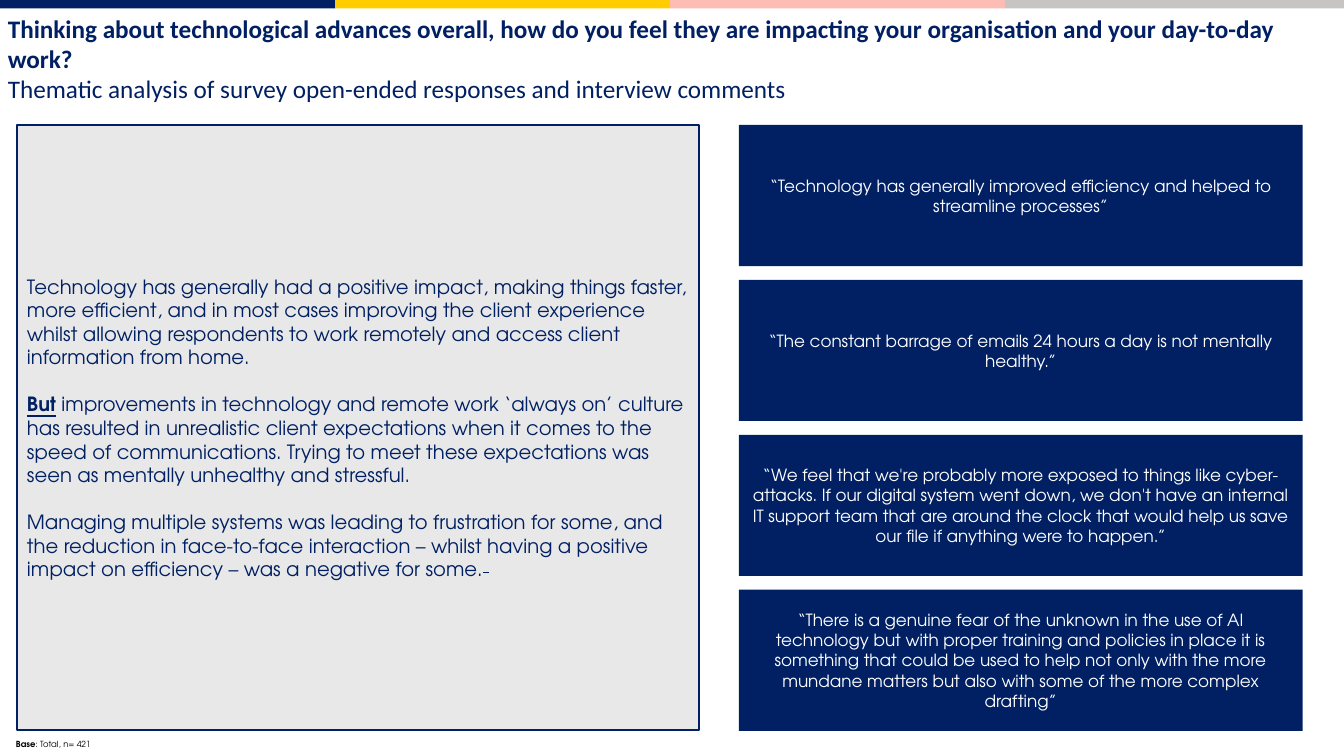
from dataclasses import dataclass

from pptx import Presentation
from pptx.dml.color import RGBColor
from pptx.enum.shapes import MSO_SHAPE
from pptx.enum.text import MSO_ANCHOR, PP_ALIGN
from pptx.shapes.autoshape import Shape
from pptx.slide import Slide
from pptx.util import Pt

RECT = MSO_SHAPE.RECTANGLE
TOP, MIDDLE = MSO_ANCHOR.TOP, MSO_ANCHOR.MIDDLE
LEFT, CENTER = PP_ALIGN.LEFT, PP_ALIGN.CENTER

NAVY = RGBColor(0x00, 0x20, 0x63)
YELLOW = RGBColor(0xFF, 0xCD, 0x00)
PINK = RGBColor(0xFD, 0xBC, 0xB4)
SILVER = RGBColor(0xC7, 0xC4, 0xC4)
PALE = RGBColor(0xE8, 0xE8, 0xE8)
WHITE = RGBColor(0xFF, 0xFF, 0xFF)
BLACK = RGBColor(0x00, 0x00, 0x00)

HEADING_FONT = "Calibri"
BODY_FONT = "TeX Gyre Adventor"
SLIDE_W, SLIDE_H = 960, 540
BAND_W, BAND_H = 239.33, 6
PANEL_TOP = 89.3
QUOTE_PITCH = 110.65


@dataclass(frozen=True)
class Box:
    left: float
    top: float
    width: float
    height: float

    def lengths(self) -> tuple[Pt, Pt, Pt, Pt]:
        return Pt(self.left), Pt(self.top), Pt(self.width), Pt(self.height)


@dataclass(frozen=True)
class Run:
    text: str
    bold: bool = False
    underline: bool = False
    strike: bool = False


@dataclass(frozen=True)
class TextStyle:
    font: str
    size: float
    color: RGBColor
    align: PP_ALIGN = LEFT
    anchor: MSO_ANCHOR = TOP
    gap: float = 0


TITLE = TextStyle(HEADING_FONT, 18, NAVY)
SUMMARY = TextStyle(BODY_FONT, 14, NAVY, anchor=MIDDLE, gap=16.8)
QUOTE = TextStyle(BODY_FONT, 12, WHITE, align=CENTER, anchor=MIDDLE)
FOOTNOTE = TextStyle(BODY_FONT, 6, BLACK)

TITLE_TEXT = [
    [Run("Thinking about technological advances overall, how do you feel they are "
         "impacting your organisation and your day-to-day work?", bold=True)],
    [Run("Thematic analysis of survey open-ended responses and interview comments")],
]
SUMMARY_TEXT = [
    [Run("Technology has generally had a positive impact, making things faster, more "
         "efficient, and in most cases improving the client experience whilst allowing "
         "respondents to work remotely and access client information from home.")],
    [Run("But", bold=True, underline=True),
     Run(" improvements in technology and remote work ‘always on’ culture has resulted "
         "in unrealistic client expectations when it comes to the speed of "
         "communications. Trying to meet these expectations was seen as mentally "
         "unhealthy and stressful.")],
    [Run("Managing multiple systems was leading to frustration for some, and the "
         "reduction in face-to-face interaction – whilst having a positive impact on "
         "efficiency – was a negative for some."),
     Run(" ", bold=True, strike=True)],
]
QUOTES = [
    "“Technology has generally improved efficiency and helped to streamline processes”",
    "“The constant barrage of emails 24 hours a day is not mentally healthy.”",
    "“We feel that we're probably more exposed to things like cyber-attacks. If our "
    "digital system went down, we don't have an internal IT support team that are "
    "around the clock that would help us save our file if anything were to happen.”",
    "“There is a genuine fear of the unknown in the use of AI technology but with proper "
    "training and policies in place it is something that could be used to help not only "
    "with the more mundane matters but also with some of the more complex drafting”",
]
FOOTNOTE_TEXT = [[Run("Base", bold=True), Run(": Total, n= 421")]]


def write(sp: Shape, paragraphs: list[list[Run]], style: TextStyle) -> None:
    tf = sp.text_frame
    tf.word_wrap = True
    tf.vertical_anchor = style.anchor
    for i, runs in enumerate(paragraphs):
        p = tf.add_paragraph() if i else tf.paragraphs[0]
        p.alignment = style.align
        p.space_before = Pt(style.gap if i else 0)
        for run in runs:
            r = p.add_run()
            r.text = run.text
            formats = {"name": style.font, "size": Pt(style.size),
                       "bold": run.bold, "underline": run.underline}
            for name, value in formats.items():
                setattr(r.font, name, value)
            r.font.color.rgb = style.color
            if run.strike:
                r._r.get_or_add_rPr().set("strike", "sngStrike")


def add_text(slide: Slide, box: Box, paragraphs: list[list[Run]],
             style: TextStyle) -> None:
    write(slide.shapes.add_textbox(*box.lengths()), paragraphs, style)


def add_rect(slide: Slide, box: Box, fill: RGBColor) -> Shape:
    sp = slide.shapes.add_shape(RECT, *box.lengths())
    sp.shadow.inherit = False
    sp.fill.solid()
    sp.fill.fore_color.rgb = fill
    sp.line.fill.background()
    return sp


def main() -> None:
    prs = Presentation()
    prs.slide_width, prs.slide_height = Pt(SLIDE_W), Pt(SLIDE_H)
    slide = prs.slides.add_slide(prs.slide_layouts[6])

    add_text(slide, Box(-1.5, 5.8, SLIDE_W, 51), TITLE_TEXT, TITLE)

    bands = [NAVY, YELLOW, PINK, SILVER]
    for i, color in enumerate(bands):
        left = i * BAND_W
        width = SLIDE_W - left if i == len(bands) - 1 else BAND_W
        add_rect(slide, Box(left, 0, width, BAND_H), color)

    panel = add_rect(slide, Box(12.2, PANEL_TOP, 487, 432.4), PALE)
    panel.line.color.rgb = NAVY
    panel.line.width = Pt(1.5)
    write(panel, SUMMARY_TEXT, SUMMARY)

    for i, quote in enumerate(QUOTES):
        box = Box(527.8, PANEL_TOP + i * QUOTE_PITCH, 402.6, 100.8)
        write(add_rect(slide, box, NAVY), [[Run(quote)]], QUOTE)

    add_text(slide, Box(4.3, 524.2, 951, 14.4), FOOTNOTE_TEXT, FOOTNOTE)
    prs.save("out.pptx")


if __name__ == "__main__":
    main()
